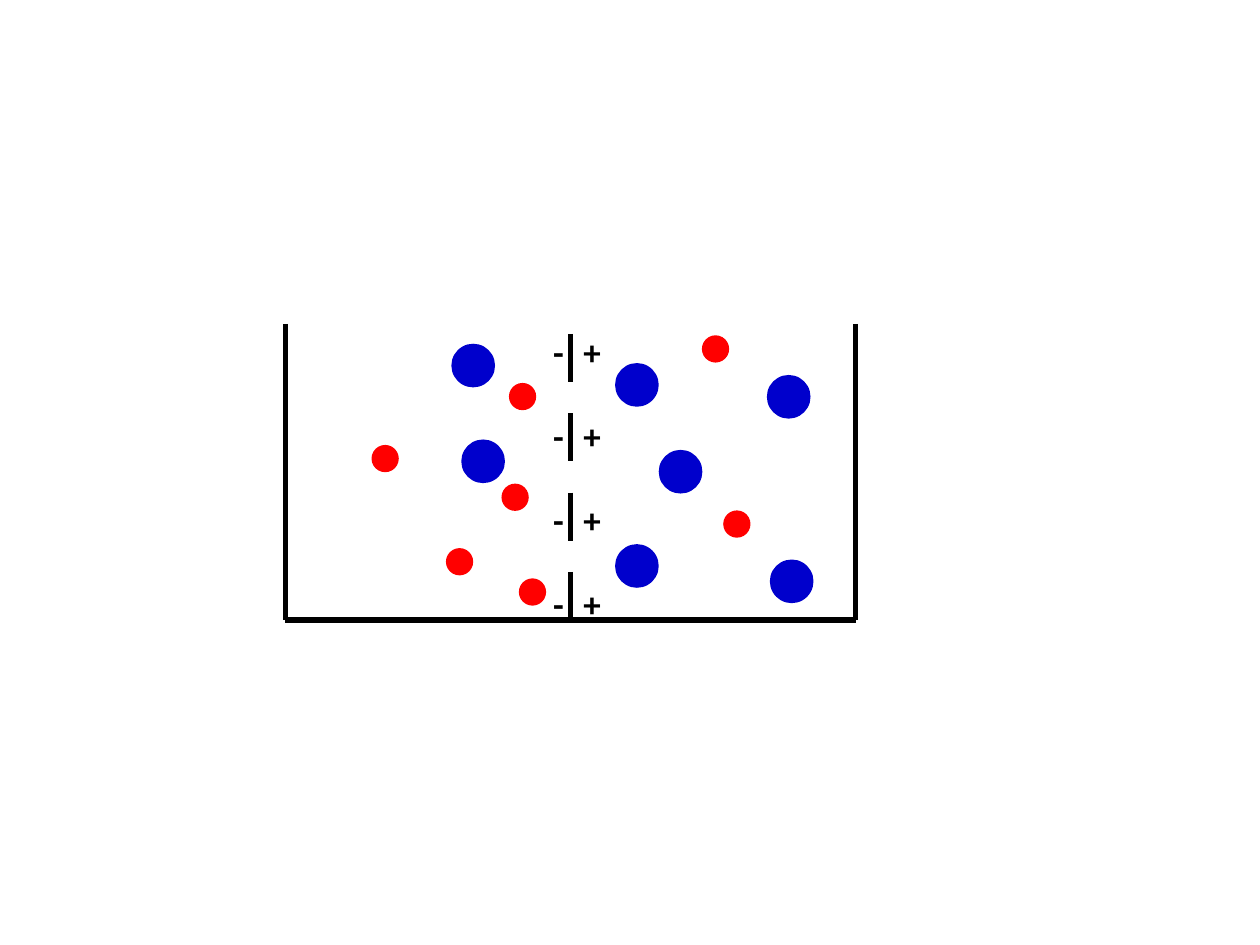
import pptx
import pptx.dml.color
import pptx.enum.shapes
import pptx.enum.text
import pptx.util
import lxml.etree
from pptx.util import Cm

THEME = {
    "line": "000000",
    "small_ion": "FF0000",
    "large_ion": "0000CC",
    "text": "000000",
    "font": "Calibri",
    "sign_size": 20,
    "line_width": 3,
}


def add_line(slide, start, end):
    """Draw a straight black line between two points given in centimetres."""
    line = slide.shapes.add_connector(
        pptx.enum.shapes.MSO_CONNECTOR.STRAIGHT,
        Cm(start[0]), Cm(start[1]), Cm(end[0]), Cm(end[1]))
    line.line.color.rgb = pptx.dml.color.RGBColor.from_string(THEME["line"])
    line.line.width = pptx.util.Pt(THEME["line_width"])
    properties = line._element.spPr
    lxml.etree.SubElement(properties, pptx.oxml.ns.qn("a:effectLst"))


def add_text(slide, lines, left, top, width, height, *, size, color, bold=False, gap=0):
    """Add a text box with one paragraph per line, gap points apart."""
    box = slide.shapes.add_textbox(Cm(left), Cm(top), Cm(width), Cm(height))
    box.text_frame.word_wrap = True
    box.text_frame.auto_size = pptx.enum.text.MSO_AUTO_SIZE.NONE
    for index, text in enumerate(lines):
        para = box.text_frame.paragraphs[0] if index == 0 else box.text_frame.add_paragraph()
        para.space_before = pptx.util.Pt(gap if index else 0)
        span = para.add_run()
        span.text = text
        span.font.name = THEME["font"]
        span.font.size = pptx.util.Pt(size)
        span.font.bold = bold
        span.font.color.rgb = pptx.dml.color.RGBColor.from_string(color)


deck = pptx.Presentation()
deck.slide_width, deck.slide_height = Cm(25.4), Cm(19.05)
page = deck.slides.add_slide(deck.slide_layouts[6])

# Tank walls and floor
tank_left, tank_right, tank_top, tank_bottom = 5.75, 17.25, 6.53, 12.5
for wall_x in (tank_left, tank_right):
    add_line(page, (wall_x, tank_top), (wall_x, tank_bottom))
add_line(page, (tank_left, tank_bottom), (tank_right, tank_bottom))

# Membrane in the middle, with pores between its segments
membrane_x = (tank_left + tank_right) / 2
segment_count, segment_length, segment_pitch = 4, 0.97, 1.6
for index in range(segment_count):
    segment_bottom = tank_bottom - index * segment_pitch
    add_line(page, (membrane_x, segment_bottom - segment_length),
             (membrane_x, segment_bottom))

# Ions: diameter and the left and top of each one
ions = {
    "small_ion": (0.55, [
        (7.49, 8.97), (8.99, 11.05), (14.58, 10.29), (14.15, 6.76),
        (10.26, 7.72), (10.11, 9.75), (10.46, 11.66)]),
    "large_ion": (0.88, [
        (9.1, 6.93), (9.3, 8.86), (12.4, 7.32), (15.46, 7.56),
        (13.28, 9.07), (12.4, 10.97), (15.52, 11.28)]),
}
for kind, (diameter, places) in ions.items():
    for left, top in places:
        ion = page.shapes.add_shape(
            pptx.enum.shapes.MSO_SHAPE.OVAL,
            Cm(left), Cm(top), Cm(diameter), Cm(diameter))
        ion.shadow.inherit = False
        ion.fill.solid()
        ion.fill.fore_color.rgb = pptx.dml.color.RGBColor.from_string(THEME[kind])
        ion.line.fill.background()

# Charges on both sides of the membrane
for sign, left in (("+", 11.51), ("-", 10.9)):
    add_text(page, [sign] * segment_count, left, tank_top, 1, 6.25,
             size=THEME["sign_size"], color=THEME["text"], bold=True, gap=24)

deck.save("out.pptx")
